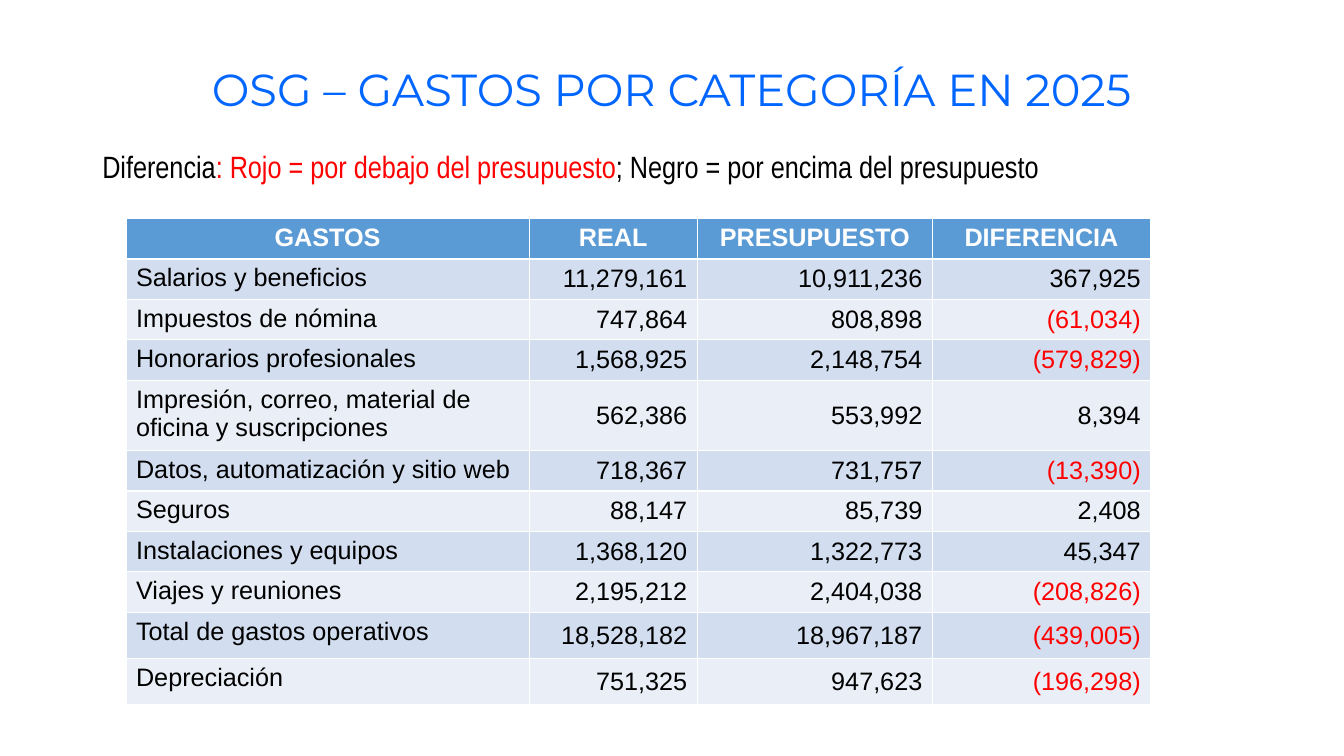
from dataclasses import dataclass

from pptx import Presentation
from pptx.dml.color import RGBColor as RGB
from pptx.enum.text import MSO_ANCHOR as ANCHOR, PP_ALIGN as ALIGN
from pptx.util import Pt


@dataclass(frozen=True)
class Theme:
    title_font: str = "Montserrat"
    note_font: str = "Arial Narrow"
    table_font: str = "Arial"
    title_size: int = 32
    note_size: int = 22
    table_size: int = 18
    blue: str = "0066FF"
    black: str = "000000"
    red: str = "FF0000"
    white: str = "FFFFFF"
    header: str = "5B9BD5"
    bands: tuple = ("D2DEEF", "EAEFF7")


def add_run(p, text, *, font, size, color, bold=False):
    r = p.add_run()
    r.text = text
    r.font.name = font
    r.font.size = Pt(size)
    r.font.bold = bold
    r.font.color.rgb = RGB.from_string(color)
    return r


class SlideBuilder:
    def __init__(self, slide, theme):
        self.slide = slide
        self.theme = theme

    def text(self, box, runs, *, font, size, align=ALIGN.LEFT,
             anchor=ANCHOR.TOP, line_spacing=None, space_after=0):
        """Place a text box holding one paragraph of (text, color) runs."""
        sp = self.slide.shapes.add_textbox(*map(Pt, box))
        tf = sp.text_frame
        tf.word_wrap = True
        tf.vertical_anchor = anchor
        p = tf.paragraphs[0]
        p.alignment = align
        p.line_spacing = line_spacing
        p.space_after = Pt(space_after)
        for text, color in runs:
            add_run(p, text, font=font, size=size, color=color)

    def cell(self, cell, text, *, fill, color, align, anchor, bold=False):
        cell.fill.solid()
        cell.fill.fore_color.rgb = RGB.from_string(fill)
        cell.vertical_anchor = anchor
        p = cell.text_frame.paragraphs[0]
        p.alignment = align
        add_run(p, text, font=self.theme.table_font,
                size=self.theme.table_size, color=color, bold=bold)

    def table(self, left, top, widths, heights, header, rows):
        """The default table style supplies the white rules between cells."""
        t = self.theme
        frame = self.slide.shapes.add_table(
            len(heights), len(widths), Pt(left), Pt(top),
            Pt(sum(widths)), Pt(sum(heights)))
        table = frame.table
        for column, width in zip(table.columns, widths):
            column.width = Pt(width)
        for row, height in zip(table.rows, heights):
            row.height = Pt(height)

        for c, name in enumerate(header):
            self.cell(table.cell(0, c), name, fill=t.header, color=t.white,
                      align=ALIGN.CENTER, anchor=ANCHOR.TOP, bold=True)
        for i, values in enumerate(rows):
            for c, value in enumerate(values):
                self.cell(table.cell(i + 1, c), value,
                          fill=t.bands[i % 2],
                          color=t.red if value.startswith("(") else t.black,
                          align=ALIGN.RIGHT if c else ALIGN.LEFT,
                          anchor=ANCHOR.MIDDLE if c else ANCHOR.TOP)


HEADER = ("GASTOS", "REAL", "PRESUPUESTO", "DIFERENCIA")
EXPENSES = (
    ("Salarios y beneficios", "11,279,161", "10,911,236", "367,925"),
    ("Impuestos de nómina", "747,864", "808,898", "(61,034)"),
    ("Honorarios profesionales", "1,568,925", "2,148,754", "(579,829)"),
    ("Impresión, correo, material de oficina y suscripciones",
     "562,386", "553,992", "8,394"),
    ("Datos, automatización y sitio web", "718,367", "731,757", "(13,390)"),
    ("Seguros", "88,147", "85,739", "2,408"),
    ("Instalaciones y equipos", "1,368,120", "1,322,773", "45,347"),
    ("Viajes y reuniones", "2,195,212", "2,404,038", "(208,826)"),
    ("Total de gastos operativos", "18,528,182", "18,967,187", "(439,005)"),
    ("Depreciación", "751,325", "947,623", "(196,298)"),
)
COLUMN_WIDTHS = (288, 120, 168, 156)
SHORT, NORMAL, TALL = 27.4, 28.6, 33.2
ROW_HEIGHTS = (NORMAL, SHORT, NORMAL, NORMAL, SHORT, SHORT,
               NORMAL, NORMAL, NORMAL, TALL, TALL)


def main():
    prs = Presentation()
    prs.slide_width, prs.slide_height = Pt(960), Pt(540)
    t = Theme()
    s = SlideBuilder(prs.slides.add_slide(prs.slide_layouts[6]), t)

    # Title
    s.text((66, 28.8, 828, 73.4),
           [("OSG – GASTOS POR CATEGORÍA EN 2025", t.blue)],
           font=t.title_font, size=t.title_size, align=ALIGN.CENTER,
           anchor=ANCHOR.MIDDLE, line_spacing=0.9)

    # Colour key for the difference column
    s.text((66, 102.2, 828, 396),
           [("Diferencia", t.black),
            (": Rojo = por debajo del presupuesto", t.red),
            ("; Negro = por encima del presupuesto", t.black)],
           font=t.note_font, size=t.note_size, space_after=24)

    # Expense table
    s.table(90, 156.2, COLUMN_WIDTHS, ROW_HEIGHTS, HEADER, EXPENSES)

    prs.save("out.pptx")


if __name__ == "__main__":
    main()
